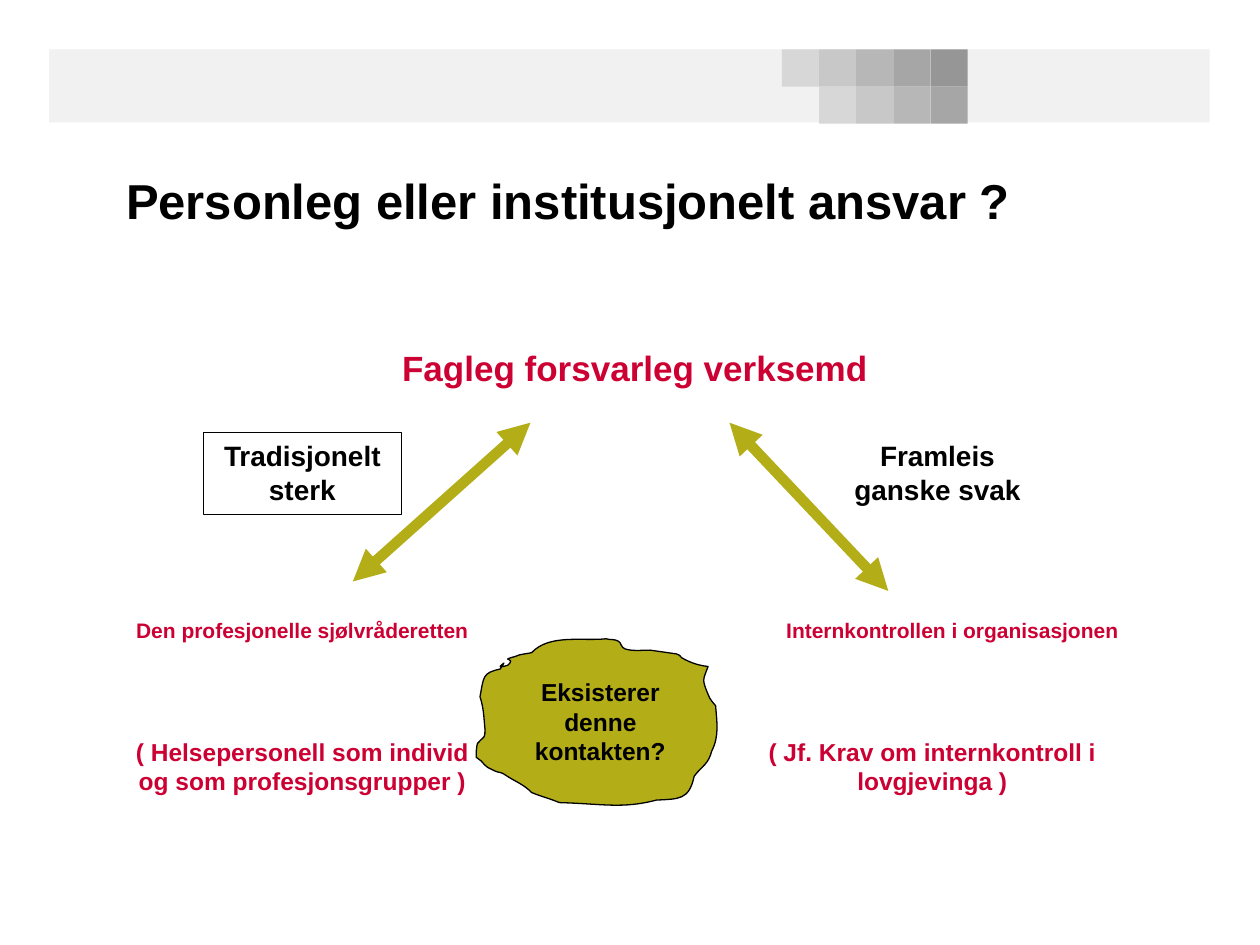
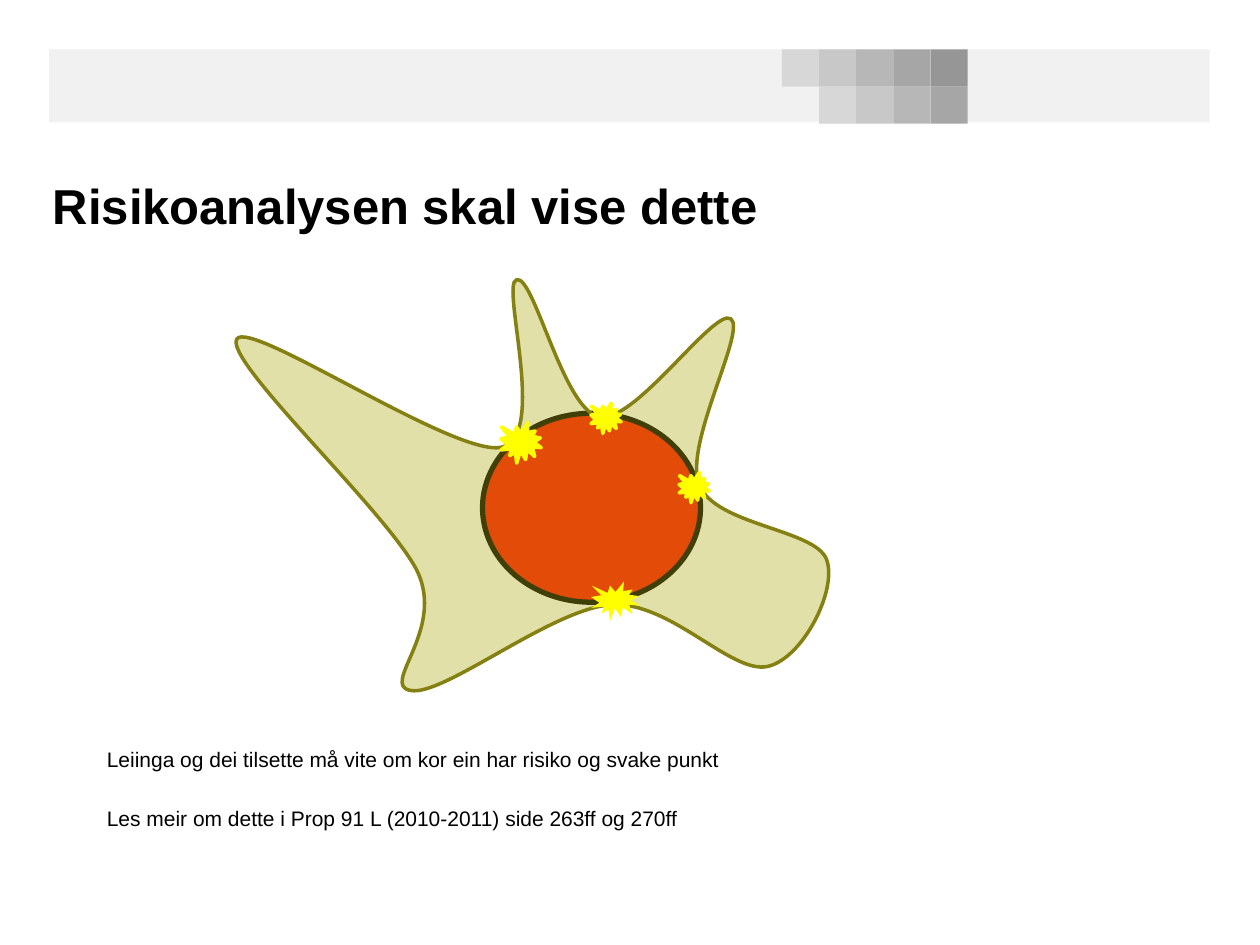
from dataclasses import dataclass

from lxml.etree import SubElement
from pptx import Presentation
from pptx.dml.color import RGBColor
from pptx.enum.shapes import MSO_CONNECTOR, MSO_SHAPE
from pptx.enum.text import MSO_ANCHOR, PP_ALIGN
from pptx.oxml.ns import qn
from pptx.util import Inches, Pt

SLIDE_WIDTH, SLIDE_HEIGHT = Inches(10), Inches(7.5)
GRID_COLUMNS = 100
CELL = SLIDE_WIDTH // GRID_COLUMNS


@dataclass(frozen=True)
class Theme:
    font: str = "Arial"
    ink: str = "000000"
    accent: str = "CC0033"
    olive: str = "B3AD18"
    dark_olive: str = "848012"
    core: str = "FF1300"
    spark: str = "FFFF00"
    band: str = "F1F1F1"
    greys: tuple = ("D7D7D7", "C8C8C8", "B7B7B7", "A6A6A6", "969696")
    title: int = 28
    heading: int = 20
    verdict: int = 16
    note: int = 14
    small: int = 12


THEME = Theme()

CONTACT_BLOB = [
    (39.7, 52.9),
    (39.9, 52.9), (40.1, 52.9), (40.3, 52.8), (41.1, 52.1), (39.5, 52.5), (40.9, 52.1),
    (41.3, 51.9), (41.8, 51.9), (42.2, 51.8), (43.6, 50.3), (46.2, 50.9), (48.1, 50.7),
    (48.4, 50.8), (48.8, 50.7), (49.1, 50.9), (49.3, 51), (49.3, 51.4), (49.6, 51.5),
    (50.2, 51.7), (50.9, 51.6), (51.6, 51.6), (52.3, 51.7), (53, 51.8), (53.7, 51.9),
    (53.9, 51.9), (54, 52.1), (54.1, 52.2), (54.8, 52.6), (55.4, 52.8), (56.2, 52.9),
    (55.8, 54), (55.7, 53.9), (56.2, 55.1), (56.3, 55.5), (56.8, 56), (56.8, 56),
    (56.9, 57.3), (57.1, 58.4), (56.5, 59.6), (56.2, 60.7), (55.8, 60.7), (55.1, 61.6),
    (54.7, 63.5), (53.9, 63.4), (52.1, 63.5), (49.4, 64.2), (47.9, 63.8), (44.4, 63.7),
    (43.7, 63.4), (42.9, 63.2), (42.2, 62.9), (41.5, 62.2), (41, 62.1), (40.1, 61.5),
    (39.9, 61.3), (39.5, 61.3), (39.3, 61.2), (39.1, 61.1), (38.9, 61), (38.7, 60.9),
    (38.5, 60.8), (38.4, 60.6), (38.2, 60.4), (38.1, 60.3), (37.9, 60.2), (37.8, 60.1),
    (37.8, 59.8), (37.8, 59.3), (37.9, 59), (38, 58.8), (38.3, 58.7), (38.4, 58.5),
    (38.5, 58.4), (38.5, 58.1), (38.5, 57.9), (38.4, 56.9), (38.4, 56.2), (38.1, 55.3),
    (38.4, 53.7), (38.3, 53.4), (39.7, 53.1), (40.1, 52.5), (40.1, 52.5), (39.7, 52.9),
]

RISK_STAR = [
    (47.6, 33.1),
    (50.4, 33.6), (56.7, 24.4), (58, 25.3), (59.3, 26.2), (54.2, 35.3), (55.5, 38.5),
    (56.8, 41.7), (64.7, 42), (65.6, 44.4), (66.5, 46.8), (63.7, 52.3), (60.9, 52.9),
    (58, 53.5), (53.2, 47.7), (48.5, 48), (43.8, 48.3), (35.2, 55.3), (32.6, 54.8),
    (30.1, 54.4), (35.4, 50), (33.1, 45.3), (30.8, 40.7), (17.7, 28.6), (18.8, 26.9),
    (19.9, 25.3), (36.1, 36.3), (39.8, 35.5), (43.5, 34.7), (39.7, 22.5), (41, 22.2),
    (42.4, 21.8), (44.7, 32.6), (47.6, 33.1),
]


def cells(*counts):
    return [round(count * CELL) for count in counts]


def rgb(code):
    return RGBColor.from_string(code)


def style(shape, fill=None, line=None, width=0.75, opacity=100):
    shape.shadow.inherit = False
    if fill:
        shape.fill.solid()
        shape.fill.fore_color.rgb = rgb(fill)
        if opacity < 100:
            colour = shape.element.spPr.find(qn("a:solidFill"))[0]
            SubElement(colour, qn("a:alpha"), val=str(opacity * 1000))
    else:
        shape.fill.background()
    if line:
        shape.line.color.rgb = rgb(line)
        shape.line.width = Pt(width)
    else:
        shape.line.fill.background()
    return shape


def add_preset(slide, kind, box, **look):
    return style(slide.shapes.add_shape(kind, *cells(*box)), **look)


def bend_segments(shape):
    outline = next(shape.element.iter(qn("a:path")))
    segments = outline.findall(qn("a:lnTo"))
    for first in range(0, len(segments), 3):
        curve = SubElement(outline, qn("a:cubicBezTo"))
        for segment in segments[first:first + 3]:
            curve.append(segment[0])
            outline.remove(segment)
    outline.append(outline.find(qn("a:close")))


def add_curve(slide, controls, **look):
    start, *others = [cells(*point) for point in controls]
    outline = slide.shapes.build_freeform(*start)
    outline.add_line_segments(others, close=True)
    shape = outline.convert_to_shape()
    bend_segments(shape)
    return style(shape, **look)


def set_font(paragraph, size, colour, bold):
    font = paragraph.font
    font.name, font.size, font.bold = THEME.font, Pt(size), bold
    font.color.rgb = rgb(colour)


def write(shape, lines, size, colour=THEME.ink, bold=True,
          align=PP_ALIGN.CENTER, gap=0):
    frame = shape.text_frame
    frame.word_wrap = True
    frame.vertical_anchor = MSO_ANCHOR.TOP
    for index, line in enumerate(lines):
        paragraph = frame.add_paragraph() if index else frame.paragraphs[0]
        paragraph.text = line
        paragraph.alignment = align
        if index:
            paragraph.space_before = Pt(gap)
        set_font(paragraph, size, colour, bold)


def add_label(slide, box, text, size, colour=THEME.ink):
    write(slide.shapes.add_textbox(*cells(*box)), [text], size, colour)


def add_double_arrow(slide, start, end):
    arrow = slide.shapes.add_connector(
        MSO_CONNECTOR.STRAIGHT, *cells(*start), *cells(*end))
    arrow.line.color.rgb = rgb(THEME.olive)
    arrow.line.width = Pt(6)
    properties = arrow.element.spPr
    for tip in ("a:headEnd", "a:tailEnd"):
        SubElement(properties.find(qn("a:ln")), qn(tip), type="triangle")
    SubElement(properties, qn("a:effectLst"))


def add_titled_slide(deck, title, box):
    slide = deck.slides.add_slide(deck.slide_layouts[5])
    heading = slide.shapes.title
    heading.left, heading.top, heading.width, heading.height = cells(*box)
    write(heading, [title], THEME.title, align=PP_ALIGN.LEFT)
    heading.text_frame.vertical_anchor = MSO_ANCHOR.MIDDLE
    return slide


def move_banner_to_master(deck, slide):
    square, left, top = 2.95, 62.05, 3.92
    banner = [add_preset(slide, MSO_SHAPE.RECTANGLE, (3.9, top, 92.1, 5.8),
                         fill=THEME.band, opacity=97)]
    for row in range(2):
        for column in range(row, len(THEME.greys)):
            box = (left + column * square, top + row * square, square, square)
            banner.append(add_preset(slide, MSO_SHAPE.RECTANGLE, box,
                                     fill=THEME.greys[column - row]))
    master_tree = deck.slide_master.shapes.element
    for index, part in enumerate(banner):
        part.element.nvSpPr.cNvPr.set("id", str(100 + index))
        master_tree.insert(2 + index, part.element)


def build_responsibility(deck):
    slide = add_titled_slide(deck, "Personleg eller institusjonelt ansvar ?",
                             (9, 9.6, 84.3, 12.6))
    move_banner_to_master(deck, slide)
    add_label(slide, (27.95, 27, 44.9, 4.4), "Fagleg forsvarleg verksemd",
              THEME.heading, THEME.accent)
    add_label(slide, (5.9, 48.5, 36.2, 9), "Den profesjonelle sjølvråderetten",
              THEME.small, THEME.accent)
    add_label(slide, (56.3, 48.5, 38.6, 9), "Internkontrollen i organisasjonen",
              THEME.small, THEME.accent)
    add_double_arrow(slide, (28, 46.15), (42.1, 33.55))
    add_double_arrow(slide, (57.9, 33.55), (70.5, 46.9))
    add_label(slide, (9.05, 58, 29.9, 5.7),
              "( Helsepersonell som individ og som profesjonsgrupper )",
              THEME.note, THEME.accent)
    add_label(slide, (54.7, 58, 38.6, 5.7),
              "( Jf. Krav om internkontroll i lovgjevinga )",
              THEME.note, THEME.accent)
    tradition = add_preset(slide, MSO_SHAPE.RECTANGLE, (16.15, 34.35, 15.7, 6.5),
                           line=THEME.ink)
    write(tradition, ["Tradisjonelt sterk"], THEME.verdict)
    add_label(slide, (65.75, 34.35, 17.3, 6.4), "Framleis ganske svak",
              THEME.verdict)
    add_curve(slide, CONTACT_BLOB, fill=THEME.olive, line=THEME.ink)
    add_label(slide, (40.55, 53.25, 14.2, 8), "Eksisterer denne kontakten?",
              THEME.note)


def build_risk_analysis(deck):
    slide = add_titled_slide(deck, "Risikoanalysen skal vise dette",
                             (3.2, 13.5, 70.2, 5.5))
    add_preset(slide, MSO_SHAPE.OVAL, (38.3, 32.8, 17.3, 15),
               fill=THEME.core, line=THEME.ink, width=3)
    add_curve(slide, RISK_STAR, fill=THEME.olive, opacity=37,
              line=THEME.dark_olive, width=2)
    for left, top, size in ((39.75, 33.55, 3.2), (46.9, 32, 2.4), (53.9, 37.5, 2.4)):
        add_preset(slide, MSO_SHAPE.EXPLOSION1, (left, top, size, size),
                   fill=THEME.spark, line=THEME.spark, width=2)
    add_preset(slide, MSO_SHAPE.EXPLOSION1, (46.9, 46.15, 3.9, 3.1), fill=THEME.spark)
    advice = slide.shapes.add_textbox(*cells(7.5, 58.75, 85, 7.9))
    write(advice, [
        "Leiinga og dei tilsette må vite om kor ein har risiko og svake punkt",
        "Les meir om dette i Prop 91 L (2010-2011) side 263ff og 270ff",
    ], THEME.small, bold=False, align=PP_ALIGN.LEFT, gap=19.5)


def main():
    deck = Presentation()
    deck.slide_width, deck.slide_height = SLIDE_WIDTH, SLIDE_HEIGHT
    build_responsibility(deck)
    build_risk_analysis(deck)
    deck.save("out.pptx")


if __name__ == "__main__":
    main()
